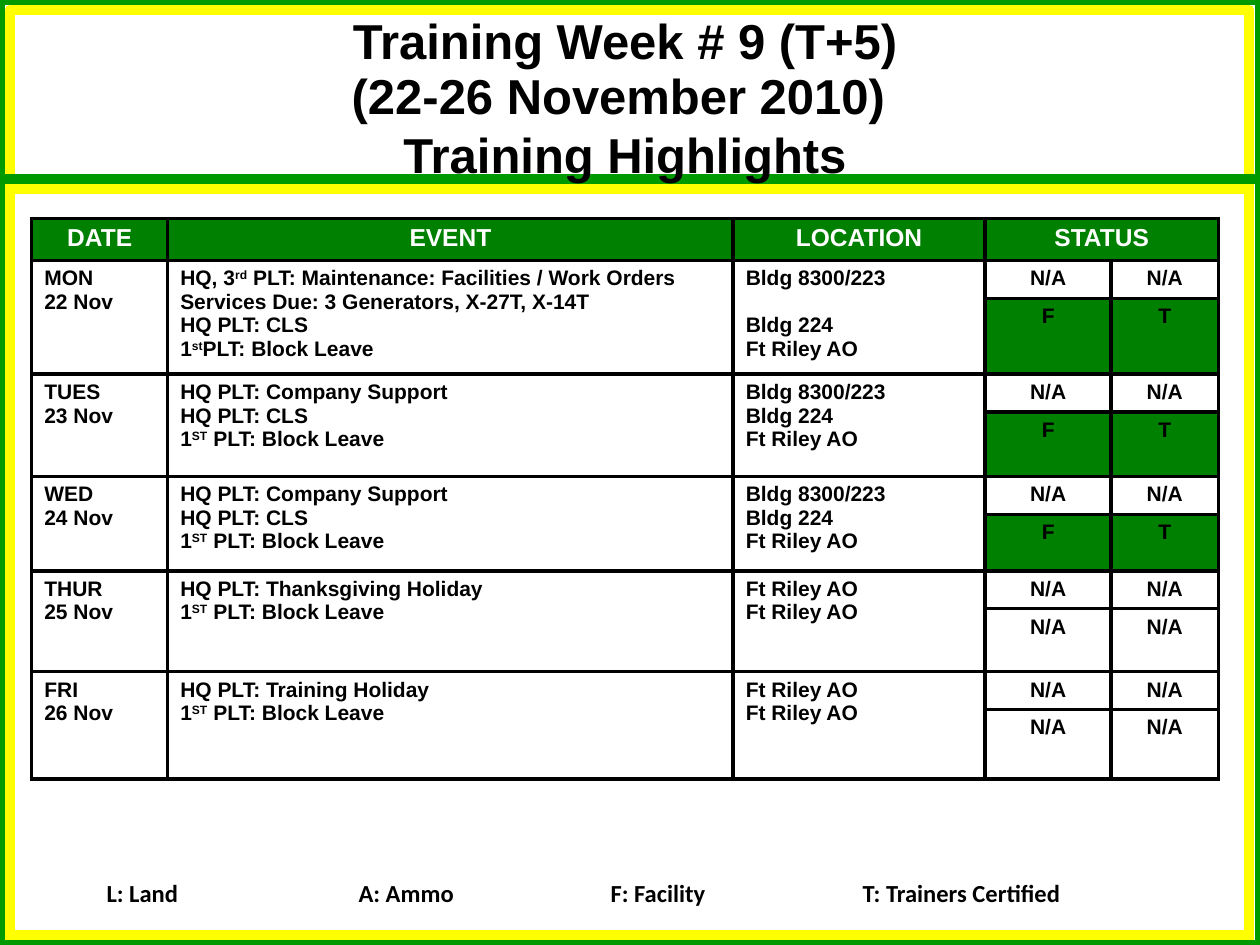
from lxml import etree
from pptx import Presentation
from pptx.dml.color import RGBColor
from pptx.enum.shapes import MSO_CONNECTOR, MSO_SHAPE
from pptx.enum.text import MSO_ANCHOR, MSO_AUTO_SIZE, PP_ALIGN
from pptx.oxml import parse_xml
from pptx.oxml.ns import nsdecls, qn
from pptx.util import Cm, Pt

RECTANGLE = MSO_SHAPE.RECTANGLE
STRAIGHT = MSO_CONNECTOR.STRAIGHT
MIDDLE = MSO_ANCHOR.MIDDLE
GROW = MSO_AUTO_SIZE.SHAPE_TO_FIT_TEXT
CENTER, LEFT = PP_ALIGN.CENTER, PP_ALIGN.LEFT

BLACK = RGBColor(0x00, 0x00, 0x00)
WHITE = RGBColor(0xFF, 0xFF, 0xFF)
YELLOW = RGBColor(0xFF, 0xFF, 0x00)
FRAME_GREEN = RGBColor(0x00, 0x99, 0x00)
STATUS_GREEN = RGBColor(0x00, 0x80, 0x00)

TITLE_FONT = {"name": "Arial", "size": Pt(28), "bold": True}
HEADER_FONT = {"name": "Arial", "size": Pt(14), "bold": True}
BODY_FONT = {"name": "Arial", "size": Pt(12), "bold": True}
LEGEND_FONT = {"name": "Calibri", "size": Pt(14), "bold": True}

HEADERS = ["DATE", "EVENT", "LOCATION", "STATUS"]
COLUMN_WIDTHS = [2.74, 11.4, 5.08, 2.54, 2.16]
HEADER_HEIGHT, UPPER_HEIGHT = 0.85, 0.76
BLOCK_LEAVE = "1^ST^ PLT: Block Leave"
SUPPORT_EVENTS = ["HQ PLT: Company Support", "HQ PLT: CLS", BLOCK_LEAVE]
SUPPORT_PLACES = ["Bldg 8300/223", "Bldg 224", "Ft Riley AO"]
LEAVE_PLACES = ["Ft Riley AO", "Ft Riley AO"]
FACILITY_TRAINERS = ["F", "T"]
NOT_APPLICABLE = ["N/A", "N/A"]
DAYS = [
    (["MON", "22 Nov"],
     ["HQ, 3^rd^ PLT: Maintenance: Facilities / Work Orders",
      "Services Due: 3 Generators, X-27T, X-14T",
      "HQ PLT: CLS", "1^st^PLT: Block Leave"],
     SUPPORT_PLACES, FACILITY_TRAINERS, 1.53),
    (["TUES", "23 Nov"], SUPPORT_EVENTS, SUPPORT_PLACES, FACILITY_TRAINERS, 1.3),
    (["WED", "24 Nov"], SUPPORT_EVENTS, SUPPORT_PLACES, FACILITY_TRAINERS, 1.14),
    (["THUR", "25 Nov"], ["HQ PLT: Thanksgiving Holiday", BLOCK_LEAVE],
     LEAVE_PLACES, NOT_APPLICABLE, 1.27),
    (["FRI", "26 Nov"], ["HQ PLT: Training Holiday", BLOCK_LEAVE],
     LEAVE_PLACES, NOT_APPLICABLE, 1.4),
]


def write_lines(text_frame, lines, style, color=BLACK, align=LEFT):
    for number, line in enumerate(lines):
        paragraph = text_frame.paragraphs[0] if number == 0 else text_frame.add_paragraph()
        paragraph.alignment = align
        for row_number, text_row in enumerate(line.split("\n")):
            if row_number:
                paragraph.add_line_break()
            for position, piece in enumerate(text_row.split("^")):
                run = paragraph.add_run()
                run.text = piece
                for attribute, value in style.items():
                    setattr(run.font, attribute, value)
                run.font.color.rgb = color
                if position % 2:
                    run.font._element.set("baseline", "30000")


def fill_cell(cell, color):
    cell.fill.solid()
    cell.fill.fore_color.rgb = color


presentation = Presentation()
presentation.slide_width = Cm(25.4)
presentation.slide_height = Cm(19.05)
slide = presentation.slides.add_slide(presentation.slide_layouts[5])
shapes = slide.shapes

for left, top, width, height, color in [
    (0.2, 0.2, 24.98, 18.85, YELLOW),
    (0, 0, 25.4, 19.05, FRAME_GREEN),
]:
    border = shapes.add_shape(RECTANGLE, Cm(left), Cm(top), Cm(width), Cm(height))
    border.shadow.inherit = False
    border.fill.background()
    border.line.color.rgb = color
    border.line.width = Pt(6)

for start, end, top, color in [
    (0.2, 25.2, 18.85, YELLOW),
    (0.2, 25.2, 3.81, YELLOW),
    (0, 25.4, 3.61, FRAME_GREEN),
]:
    rule = shapes.add_connector(STRAIGHT, Cm(start), Cm(top), Cm(end), Cm(top))
    rule.line.color.rgb = color
    rule.line.width = Pt(6)
    etree.SubElement(rule._element.spPr, qn("a:effectLst"))

title = shapes.title
title.left, title.top, title.width, title.height = Cm(4.45), Cm(0.58), Cm(16.3), Cm(3.25)
title.text_frame.word_wrap = True
title.text_frame.auto_size = GROW
title.text_frame.vertical_anchor = MIDDLE
write_lines(title.text_frame,
            ["Training Week # 9 (T+5)", "(22-26 November 2010) \nTraining Highlights"],
            TITLE_FONT, align=CENTER)
title.text_frame.paragraphs[0].line_spacing = 0.5
shapes._spTree.append(title._element)

row_heights = [HEADER_HEIGHT]
for day in DAYS:
    row_heights += [UPPER_HEIGHT, day[-1]]
schedule = shapes.add_table(len(row_heights), len(COLUMN_WIDTHS), Cm(0.64), Cm(4.4),
                            Cm(sum(COLUMN_WIDTHS)), Cm(sum(row_heights))).table
schedule.first_row = False
schedule.horz_banding = False
for column, width in zip(schedule.columns, COLUMN_WIDTHS):
    column.width = Cm(width)
for row, height in zip(schedule.rows, row_heights):
    row.height = Cm(height)

for cell in schedule.iter_cells():
    for side in "LRTB":
        cell._tc.get_or_add_tcPr().append(parse_xml(
            f'<a:ln{side} {nsdecls("a")} w="{Pt(2.25)}"><a:solidFill>'
            f'<a:srgbClr val="{BLACK}"/></a:solidFill></a:ln{side}>'))
    cell.fill.background()

schedule.cell(0, 3).merge(schedule.cell(0, 4))
for index, header in enumerate(HEADERS):
    cell = schedule.cell(0, index)
    fill_cell(cell, STATUS_GREEN)
    write_lines(cell.text_frame, [header], HEADER_FONT, WHITE, CENTER)

for index, (date, events, places, lower_status, _) in enumerate(DAYS):
    upper = 1 + 2 * index
    for column, lines in enumerate([date, events, places]):
        cell = schedule.cell(upper, column)
        cell.merge(schedule.cell(upper + 1, column))
        write_lines(cell.text_frame, lines, BODY_FONT)
    for row, statuses in [(upper, NOT_APPLICABLE), (upper + 1, lower_status)]:
        for column, status in enumerate(statuses, 3):
            cell = schedule.cell(row, column)
            fill_cell(cell, WHITE if status == "N/A" else STATUS_GREEN)
            write_lines(cell.text_frame, [status], BODY_FONT, align=CENTER)
schedule.cell(1, 2).text_frame.paragraphs[1].space_before = Pt(13.5)

legend = shapes.add_textbox(Cm(1.9), Cm(17.58), Cm(23.5), Cm(0.86)).text_frame
legend.word_wrap = True
legend.auto_size = GROW
tab_stops = etree.SubElement(legend.paragraphs[0]._p.get_or_add_pPr(), qn("a:tabLst"))
for stop in range(1, 4):
    etree.SubElement(tab_stops, qn("a:tab"), pos=str(Cm(5.08 * stop)), algn="l")
write_lines(legend, ["L: Land\tA: Ammo\tF: Facility\tT: Trainers Certified"], LEGEND_FONT)

presentation.save("out.pptx")
